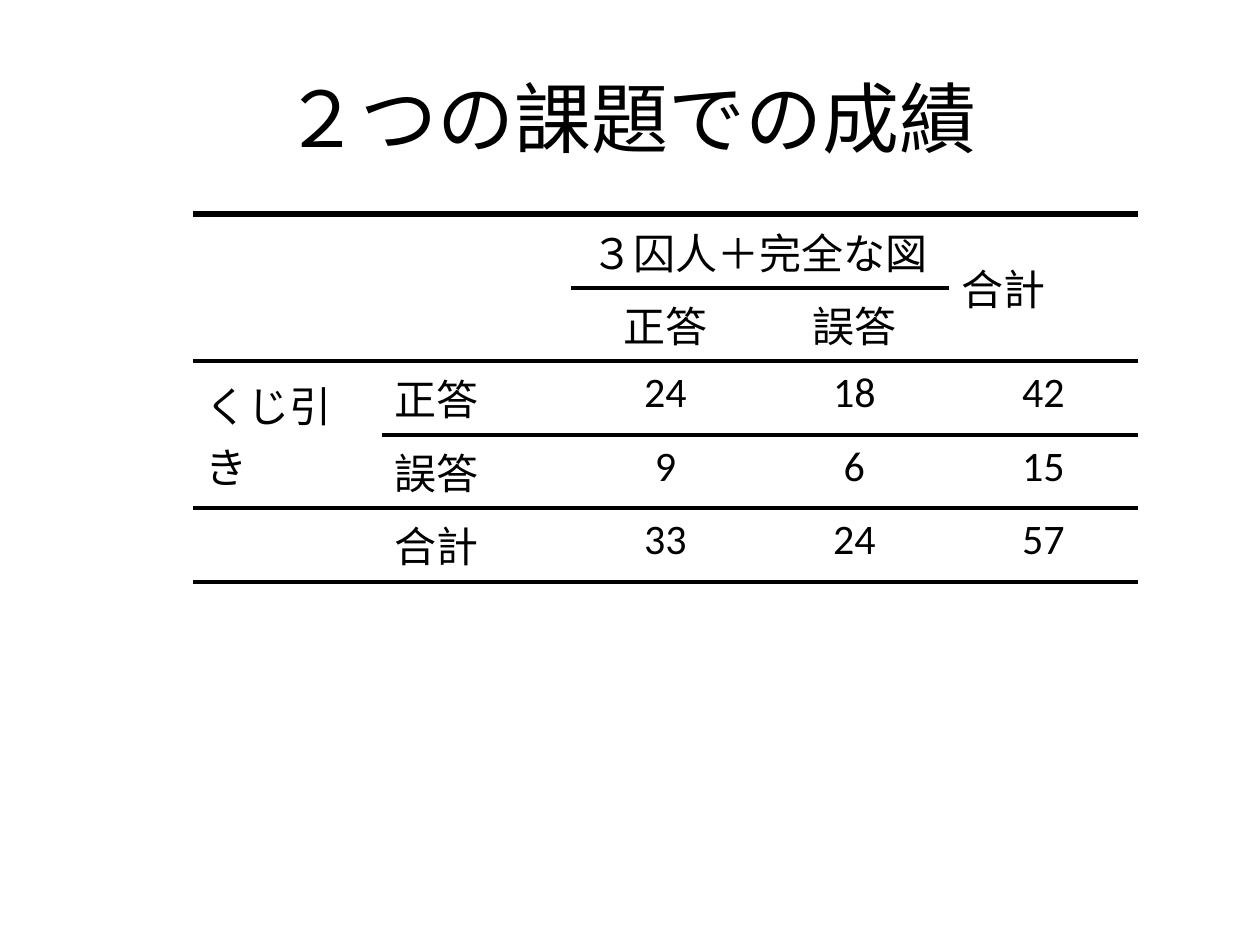
"""Build a slide with a cross table of results on two tasks."""
import lxml.etree
import pptx
import pptx.dml.color
import pptx.enum.text
import pptx.oxml.ns
import pptx.util

PX = 914400 // 126
FONT = "Calibri"
COLORS = {"text": "000000", "rule": "000000"}
ALIGN = pptx.enum.text.PP_ALIGN
MIDDLE = pptx.enum.text.MSO_ANCHOR.MIDDLE

TITLE = "２つの課題での成績"
TITLE_BOX = (63, 38, 1134, 158)
TABLE_BOX = (193, 214, 945, 368)
COLUMN_WIDTH = 189
ROW_HEIGHTS = [74, 73, 74, 73, 74]

ROWS = [
    ["", "", "３囚人＋完全な図", "", "合計"],
    ["", "", "正答", "誤答", ""],
    ["くじ引き", "正答", "24", "18", "42"],
    ["", "誤答", "9", "6", "15"],
    ["", "合計", "33", "24", "57"],
]
MERGES = [((0, 2), (0, 3)), ((0, 4), (1, 4)), ((2, 0), (3, 0))]
LEFT_ALIGNED = {(0, 4), (2, 0), (2, 1), (3, 1), (4, 1)}
RULES = [
    (range(0, 5), 4.5),
    (range(2, 4), 2.25),
    (range(0, 5), 2.25),
    (range(1, 5), 2.25),
    (range(0, 5), 2.25),
    (range(0, 5), 3),
]


def emu(lengths):
    return [length * PX for length in lengths]


def write(text_frame, text, size, alignment):
    paragraph = text_frame.paragraphs[0]
    paragraph.text = text
    paragraph.alignment = alignment
    paragraph.font.size = pptx.util.Pt(size)
    paragraph.font.name = FONT
    paragraph.font.color.rgb = pptx.dml.color.RGBColor.from_string(COLORS["text"])


def add_border(cell, side, width):
    qn = pptx.oxml.ns.qn
    properties = cell._tc.get_or_add_tcPr()
    line = lxml.etree.SubElement(properties, qn(f"a:ln{side}"), w=str(int(pptx.util.Pt(width))))
    if width:
        fill = lxml.etree.SubElement(line, qn("a:solidFill"))
        lxml.etree.SubElement(fill, qn("a:srgbClr"), val=COLORS["rule"])
    else:
        lxml.etree.SubElement(line, qn("a:noFill"))


def rule_width(boundary, column):
    columns, width = RULES[boundary]
    return width if column in columns else 0


def add_title(slide):
    text_frame = slide.shapes.add_textbox(*emu(TITLE_BOX)).text_frame
    text_frame.word_wrap = True
    text_frame.vertical_anchor = MIDDLE
    write(text_frame, TITLE, 44, ALIGN.CENTER)


def add_results(slide):
    table = slide.shapes.add_table(len(ROWS), len(ROWS[0]), *emu(TABLE_BOX)).table
    table.first_row = table.horz_banding = False
    for column in table.columns:
        column.width = COLUMN_WIDTH * PX
    for row, height in zip(table.rows, ROW_HEIGHTS):
        row.height = height * PX

    for row_index, row in enumerate(ROWS):
        for column_index, text in enumerate(row):
            cell = table.cell(row_index, column_index)
            left = (row_index, column_index) in LEFT_ALIGNED
            write(cell.text_frame, text, 24, ALIGN.LEFT if left else ALIGN.CENTER)
            add_border(cell, "L", 0)
            add_border(cell, "R", 0)
            add_border(cell, "T", rule_width(row_index, column_index))
            add_border(cell, "B", rule_width(row_index + 1, column_index))
            cell.fill.background()

    for first, last in MERGES:
        table.cell(*first).merge(table.cell(*last))
        table.cell(*first).vertical_anchor = MIDDLE


def main():
    presentation = pptx.Presentation()
    presentation.slide_width, presentation.slide_height = emu((1260, 945))
    slide = presentation.slides.add_slide(presentation.slide_layouts[6])
    add_title(slide)
    add_results(slide)
    presentation.save("out.pptx")


if __name__ == "__main__":
    main()
